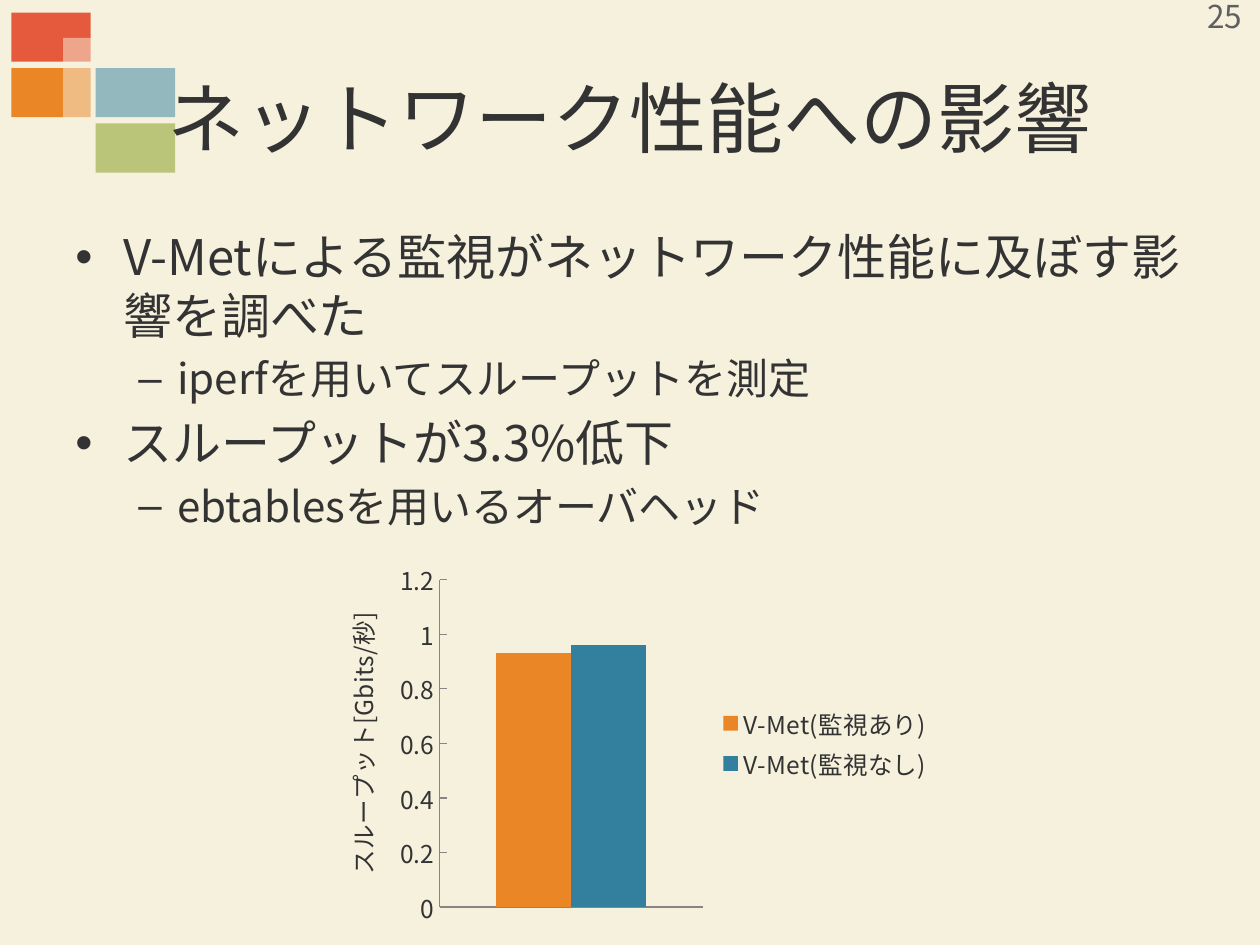
import pptx
import pptx.util
import pptx.chart.data
import pptx.dml.color
import pptx.enum.chart
import pptx.enum.shapes
import pptx.enum.text
import lxml.etree
from pptx.oxml.ns import qn
from pptx.util import Inches

FONT = "Noto Sans CJK JP"
TEXT, PAPER = "333333", "F5F1DD"
ORANGE, BLUE = "EB8627", "327F9E"


def rgb(value):
    return pptx.dml.color.RGBColor.from_string(value)


def write(p, text, size=14, color=TEXT, align=None):
    p.alignment = align
    r = p.add_run()
    r.text = text
    r.font.size = pptx.util.Pt(size)
    r.font.bold = False
    r.font.name = FONT
    r.font.color.rgb = rgb(color)
    east_asian = lxml.etree.SubElement(r.font._element, qn("a:ea"))
    east_asian.set("typeface", FONT)


prs = pptx.Presentation()
prs.slide_width, prs.slide_height = Inches(10), Inches(7.5)
s = prs.slides.add_slide(prs.slide_layouts[5])
s.background.fill.solid()
s.background.fill.fore_color.rgb = rgb(PAPER)
CENTER = pptx.enum.text.PP_ALIGN.CENTER
MIDDLE = pptx.enum.text.MSO_ANCHOR.MIDDLE

# Corner squares
for left, top, color in [(0.09, 0.1, "E5593C"), (0.76, 0.98, "829916"),
                         (0.76, 0.54, BLUE), (0.09, 0.54, ORANGE)]:
    sp = s.shapes.add_shape(pptx.enum.shapes.MSO_SHAPE.RECTANGLE,
                            Inches(left), Inches(top), Inches(0.63), Inches(0.39))
    sp.shadow.inherit = False
    sp.fill.solid()
    sp.fill.fore_color.rgb = rgb(color)
    sp.line.fill.background()

# Title, half transparent and in front of the squares
title = s.shapes.title
title.left, title.top = Inches(0.5), Inches(0.3)
title.width, title.height = Inches(9), Inches(1.25)
title.fill.solid()
title.fill.fore_color.rgb = rgb(PAPER)
fill_color = title._element.spPr.find(".//" + qn("a:srgbClr"))
lxml.etree.SubElement(fill_color, qn("a:alpha")).set("val", "50000")
title.text_frame.vertical_anchor = MIDDLE
write(title.text_frame.paragraphs[0], "ネットワーク性能への影響", size=44, align=CENTER)
s.shapes._spTree.append(title._element)

# Bulleted body: size, bullet, left margin and hanging indent for each level
levels = [(28, "•", 0.38, -0.38), (24, "–", 0.81, -0.31)]
body = [(0, "V-Metによる監視がネットワーク性能に及ぼす影響を調べた"),
        (1, "iperfを用いてスループットを測定"),
        (0, "スループットが3.3%低下"),
        (1, "ebtablesを用いるオーバヘッド")]
tf = s.shapes.add_textbox(Inches(0.5), Inches(1.75), Inches(9), Inches(4.95)).text_frame
tf.word_wrap = True
for i, (level, text) in enumerate(body):
    size, bullet, margin, indent = levels[level]
    p = tf.add_paragraph() if i else tf.paragraphs[0]
    p.level = level
    p.space_before = pptx.util.Pt(size * 0.2)
    write(p, text, size=size)
    pPr = p._p.get_or_add_pPr()
    pPr.set("marL", str(Inches(margin)))
    pPr.set("indent", str(Inches(indent)))
    lxml.etree.SubElement(pPr, qn("a:buFont")).set("typeface", "Arial")
    lxml.etree.SubElement(pPr, qn("a:buChar")).set("char", bullet)

# Slide number
tf = s.shapes.add_textbox(Inches(9.35), Inches(-0.02), Inches(0.74), Inches(0.3)).text_frame
tf.vertical_anchor = MIDDLE
tf.word_wrap = True
write(tf.paragraphs[0], "25", size=18, color="5F5F5F", align=CENTER)

# Throughput chart
data = pptx.chart.data.CategoryChartData()
data.categories = ["1"]
data.add_series("V-Met(監視あり)", [0.93])
data.add_series("V-Met(監視なし)", [0.96])
chart = s.shapes.add_chart(pptx.enum.chart.XL_CHART_TYPE.COLUMN_CLUSTERED,
                           Inches(2.5), Inches(4.4), Inches(5), Inches(3), data).chart
chart.has_title = False
chart.font.size = pptx.util.Pt(14)
chart.font.name = FONT
chart.font.color.rgb = rgb(TEXT)
chart.has_legend = True
chart.legend.position = pptx.enum.chart.XL_LEGEND_POSITION.RIGHT
chart.legend.include_in_layout = False
plot = chart.plots[0]
plot.gap_width = 150
plot.overlap = 0
plot.vary_by_categories = False
for series, color in zip(plot.series, [ORANGE, BLUE]):
    series.format.fill.solid()
    series.format.fill.fore_color.rgb = rgb(color)

tick = pptx.enum.chart.XL_TICK_MARK
category, value = chart.category_axis, chart.value_axis
category.major_tick_mark = tick.NONE
category.tick_label_position = pptx.enum.chart.XL_TICK_LABEL_POSITION.NONE
value.major_tick_mark = tick.INSIDE
value.has_major_gridlines = False
value.minimum_scale, value.maximum_scale, value.major_unit = 0, 1.2, 0.2
for axis in (category, value):
    axis.format.line.color.rgb = rgb("868686")
write(value.axis_title.text_frame.paragraphs[0], "スループット[Gbits/秒]")

prs.save("out.pptx")
